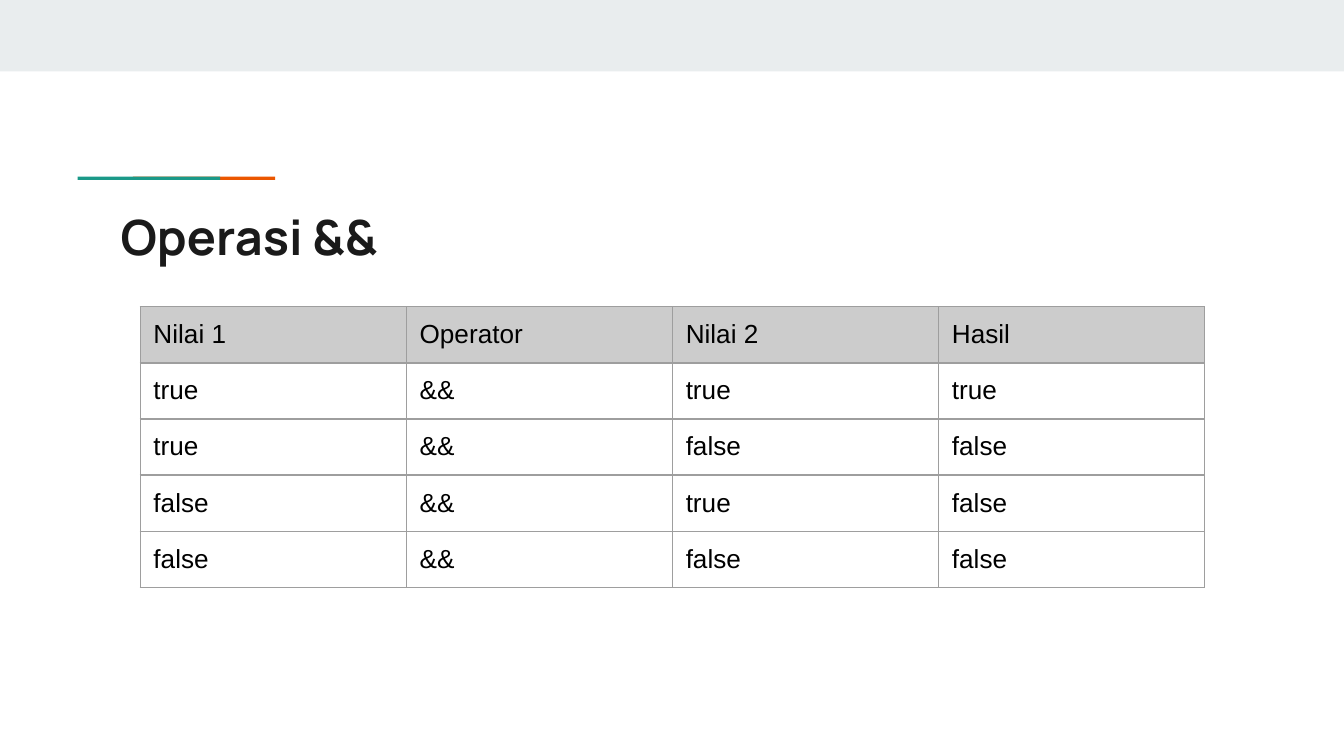
from lxml import etree
from pptx import Presentation
from pptx.dml.color import RGBColor
from pptx.enum.shapes import MSO_SHAPE
from pptx.enum.text import MSO_ANCHOR, PP_ALIGN
from pptx.oxml.ns import qn
from pptx.util import Cm, Pt

RECTANGLE = MSO_SHAPE.RECTANGLE
TOP = MSO_ANCHOR.TOP
LEFT = PP_ALIGN.LEFT

ROWS = [
    ("Nilai 1", "Operator", "Nilai 2", "Hasil"),
    ("true", "&&", "true", "true"),
    ("true", "&&", "false", "false"),
    ("false", "&&", "true", "false"),
    ("false", "&&", "false", "false"),
]


def color(value):
    return RGBColor.from_string(value)


class SlideBuilder:
    title_font = "Manrope"
    body_font = "Arial"
    ink = "1A1A1A"
    border = "9E9E9E"
    header_fill = "CCCCCC"
    inset = Cm(0.25)

    def __init__(self, slide):
        self.slide = slide

    def bar(self, left, top, width, height, fill):
        shape = self.slide.shapes.add_shape(
            RECTANGLE, Cm(left), Cm(top), Cm(width), Cm(height))
        shape.shadow.inherit = False
        shape.fill.solid()
        shape.fill.fore_color.rgb = color(fill)
        shape.line.fill.background()

    def set_font(self, paragraph, name, size, value, bold=False):
        paragraph.alignment = LEFT
        font = paragraph.font
        font.name = name
        font.size = Pt(size)
        font.bold = bold
        font.color.rgb = color(value)

    def set_insets(self, target):
        target.margin_left = target.margin_right = self.inset
        target.margin_top = target.margin_bottom = self.inset
        target.vertical_anchor = TOP

    def title(self, text, left, top, width, height):
        shape = self.slide.shapes.title
        shape.left, shape.top = Cm(left), Cm(top)
        shape.width, shape.height = Cm(width), Cm(height)
        frame = shape.text_frame
        frame.text = text
        frame.word_wrap = True
        self.set_insets(frame)
        self.set_font(frame.paragraphs[0], self.title_font, 26, self.ink, True)

    def cell_borders(self, cell):
        properties = cell._tc.get_or_add_tcPr()
        for index, side in enumerate(("lnL", "lnR", "lnT", "lnB")):
            line = etree.Element(qn(f"a:{side}"), w=str(Pt(0.75)))
            fill = etree.SubElement(line, qn("a:solidFill"))
            etree.SubElement(fill, qn("a:srgbClr"), val=self.border)
            properties.insert(index, line)

    def table(self, rows, left, top, column_width, row_height):
        columns = len(rows[0])
        table = self.slide.shapes.add_table(
            len(rows), columns, Cm(left), Cm(top),
            Cm(column_width * columns), Cm(row_height * len(rows))).table
        table.first_row = table.horz_banding = False
        for column in table.columns:
            column.width = Cm(column_width)
        for row_index, values in enumerate(rows):
            table.rows[row_index].height = Cm(row_height)
            for column_index, value in enumerate(values):
                cell = table.cell(row_index, column_index)
                cell.text = value
                self.set_insets(cell)
                self.set_font(cell.text_frame.paragraphs[0],
                              self.body_font, 14, "000000")
                if row_index == 0:
                    cell.fill.solid()
                    cell.fill.fore_color.rgb = color(self.header_fill)
                else:
                    cell.fill.background()
                self.cell_borders(cell)


def main():
    presentation = Presentation()
    presentation.slide_width = Cm(25.4)
    presentation.slide_height = Cm(14.29)
    slide = presentation.slides.add_slide(presentation.slide_layouts[5])
    builder = SlideBuilder(slide)
    builder.bar(0, 0, 25.4, 1.35, "E9EDEE")
    for left, fill in ((2.51, "EB5600"), (1.47, "1A9988")):
        builder.bar(left, 3.34, 2.69, 0.06, fill)
    builder.title("Operasi &&", 2.03, 3.66, 21.36, 1.5)
    builder.table(ROWS, 2.65, 5.8, 5.03, 1.06)
    presentation.save("out.pptx")


if __name__ == "__main__":
    main()
